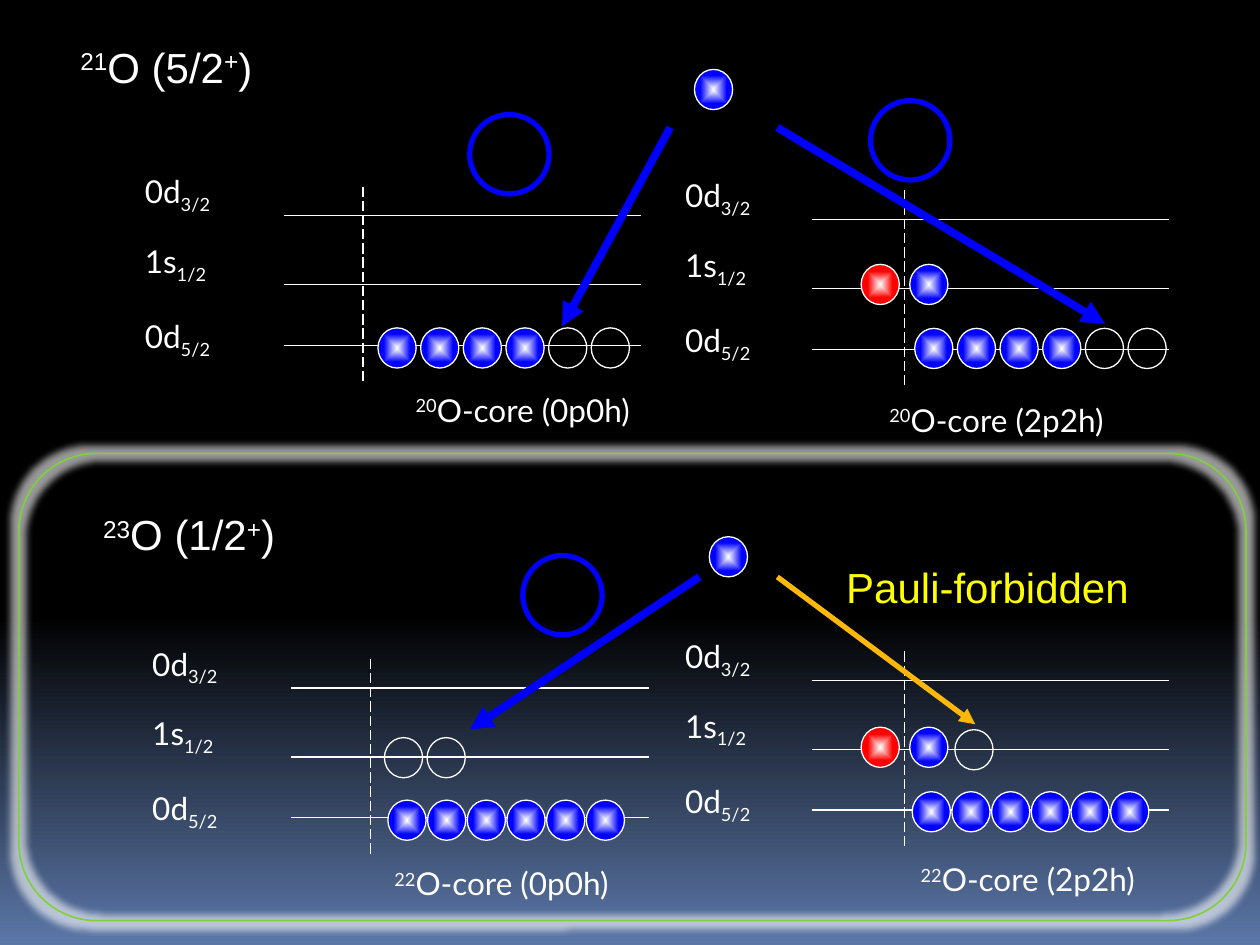
from pptx import Presentation
from pptx.dml.color import RGBColor
from pptx.enum.dml import MSO_LINE
from pptx.enum.shapes import MSO_CONNECTOR, MSO_SHAPE
from pptx.oxml import parse_xml
from pptx.oxml.ns import nsdecls, qn
from pptx.util import Cm, Pt

OVAL = MSO_SHAPE.OVAL
ROUNDED = MSO_SHAPE.ROUNDED_RECTANGLE
STRAIGHT = MSO_CONNECTOR.STRAIGHT
LONG_DASH = MSO_LINE.LONG_DASH

COLORS = {
    "white": "FFFFFF",
    "black": "000000",
    "blue": "0000FF",
    "red": "FF0000",
    "yellow": "FFFF00",
    "orange": "FEB80A",
    "green": "7FD13B",
    "steel": "5B77A8",
}
SUPER, SUB = 30, -25
LEVEL_LENGTH, AXIS_HEIGHT = 7.21, 4
LEVELS = [("0d", "3/2", 0.59), ("1s", "1/2", 1.98), ("0d", "5/2", 3.2)]
LABEL_RISES = [1, 0.99, 0.69]


def rgb(name):
    """Return the named colour."""
    return RGBColor.from_string(COLORS[name])


def add_xml(parent, tag, content="", **attributes):
    """Append a DrawingML element to a parent."""
    listed = " ".join(f'{key}="{value}"' for key, value in attributes.items())
    parent.append(parse_xml(f"<a:{tag} {nsdecls('a')} {listed}>{content}</a:{tag}>"))


def set_gradient(fill, owner, stops, shading):
    """Fill with gradient stops and a shading given as XML."""
    fill.gradient()
    gradient = owner.find(".//" + qn("a:gradFill"))
    for child in list(gradient):
        gradient.remove(child)
    content = "".join(
        f'<a:gs pos="{position * 1000}"><a:srgbClr val="{COLORS[color]}"/></a:gs>'
        for position, color in stops
    )
    add_xml(gradient, "gsLst", content)
    gradient.append(parse_xml(shading))


def add_text(page, left, top, width, height, spans, size=18, font="Lato", color="white"):
    """Add one line of (text, baseline) spans."""
    box = page.shapes.add_textbox(Cm(left), Cm(top), Cm(width), Cm(height))
    box.text_frame.word_wrap = True
    para = box.text_frame.paragraphs[0]
    for text, baseline in spans:
        span = para.add_run()
        span.text = text
        span.font.size = Pt(size)
        span.font.name = font
        span.font.color.rgb = rgb(color)
        if baseline:
            span._r.get_or_add_rPr().set("baseline", str(baseline * 1000))


def add_line(page, start, end, color="white", weight=0.75, dash=None, arrow=False):
    """Add a straight line, dashed or with an arrowhead on request."""
    line = page.shapes.add_connector(STRAIGHT, *(Cm(value) for value in (*start, *end)))
    line.line.color.rgb = rgb(color)
    line.line.width = Pt(weight)
    if dash:
        line.line.dash_style = dash
    if arrow:
        add_xml(line.line._get_or_add_ln(), "tailEnd", type="triangle")
    add_xml(line._element.spPr, "effectLst")


def add_outline(page, kind, left, top, width, height, color="white", weight=0.75):
    """Add an unfilled shape and return it."""
    shape = page.shapes.add_shape(kind, Cm(left), Cm(top), Cm(width), Cm(height))
    shape.shadow.inherit = False
    shape.fill.background()
    shape.line.color.rgb = rgb(color)
    shape.line.width = Pt(weight)
    return shape


def add_nucleons(page, left, top, colors, gap=0.86):
    """Add a row of nucleons, where None stands for a hole."""
    for index, color in enumerate(colors):
        ball = add_outline(page, OVAL, left + index * gap, top, 0.77, 0.81)
        if color:
            edge = 65 if color == "red" else 70
            set_gradient(
                ball.fill, ball._element, [(0, "white"), (edge, color)],
                f'<a:path {nsdecls("a")} path="shape"><a:fillToRect l="50000" '
                't="50000" r="50000" b="50000"/></a:path>',
            )


def add_scheme(page, left, top, axis, label_left):
    """Add three labelled levels crossed by a dashed axis."""
    for (orbit, spin, drop), rise in zip(LEVELS, LABEL_RISES):
        height = top + drop
        add_line(page, (left, height), (left + LEVEL_LENGTH, height))
        add_text(page, label_left, height - rise, 2.24, 1.27, [(orbit, 0), (spin, SUB)])
    add_line(page, (axis, top), (axis, top + AXIS_HEIGHT), dash=LONG_DASH)


def add_heading(page, left, top, mass, spin):
    """Add the name of an isotope with its spin and parity."""
    spans = [(mass, SUPER), (f"O ({spin}", 0), ("+", SUPER), (")", 0)]
    add_text(page, left, top, 4.83, 1.27, spans, size=24, font="Arial")


def add_frame(page):
    """Add the glowing frame around the lower half."""
    frame = add_outline(page, ROUNDED, 0.38, 9.14, 24.74, 9.42, "green", 0.94)
    glow = f'<a:srgbClr val="{COLORS["white"]}"><a:alpha val="60000"/></a:srgbClr>'
    effects = frame._element.spPr.find(qn("a:effectLst"))
    add_xml(effects, "glow", glow, rad=101600)


def main():
    """Build the slide and save the deck."""
    deck = Presentation()
    deck.slide_width, deck.slide_height = Cm(25.4), Cm(19.05)
    page = deck.slides.add_slide(deck.slide_layouts[6])
    set_gradient(
        page.background.fill, page._element,
        [(0, "black"), (65, "black"), (100, "steel")],
        f'<a:lin {nsdecls("a")} ang="5400000" scaled="0"/>',
    )
    add_frame(page)

    add_heading(page, 1.37, 0.71, "21", "5/2")
    add_heading(page, 1.83, 10.13, "23", "1/2")
    add_text(page, 16.81, 11.2, 6.78, 1.27, [("Pauli-forbidden", 0)],
             size=24, font="Arial", color="yellow")

    for scheme in [(5.72, 3.76, 7.32, 2.67), (16.36, 3.84, 18.24, 13.56),
                   (5.87, 13.28, 7.47, 2.82), (16.36, 13.13, 18.24, 13.56)]:
        add_scheme(page, *scheme)

    for left, top, mass, state in [(8.13, 7.75, "20", "0p0h"), (17.68, 7.95, "20", "2p2h"),
                                   (7.7, 17.3, "22", "0p0h"), (18.31, 17.22, "22", "2p2h")]:
        add_text(page, left, top, 5.26, 1.02, [(mass, SUPER), (f"O-core ({state})", 0)])

    for start, end in [((13.51, 2.57), (11.33, 6.58)), ((15.67, 2.57), (22.28, 6.53)),
                       ((14.1, 11.63), (9.47, 14.71))]:
        add_line(page, start, end, "blue", 4.5, arrow=True)
    add_line(page, (15.67, 11.63), (19.66, 14.6), "orange", 3, arrow=True)

    for left, top in [(9.47, 2.31), (17.55, 2.03), (10.54, 11.2)]:
        add_outline(page, OVAL, left, top, 1.6, 1.6, "blue", 3)

    for left, top in [(14, 1.4), (14.3, 10.82)]:
        add_nucleons(page, left, top, ["blue"])
    for left, top in [(7.62, 6.61), (18.44, 6.62)]:
        add_nucleons(page, left, top, ["blue"] * 4 + [None] * 2)
    for left, top in [(7.82, 16.13), (18.39, 15.96)]:
        add_nucleons(page, left, top, ["blue"] * 6, gap=0.8)
    for top in (5.33, 14.66):
        add_nucleons(page, 17.36, top, ["red", "blue"], gap=0.98)
    add_nucleons(page, 7.75, 14.87, [None, None])
    add_nucleons(page, 19.25, 14.71, [None])

    deck.save("out.pptx")


if __name__ == "__main__":
    main()
